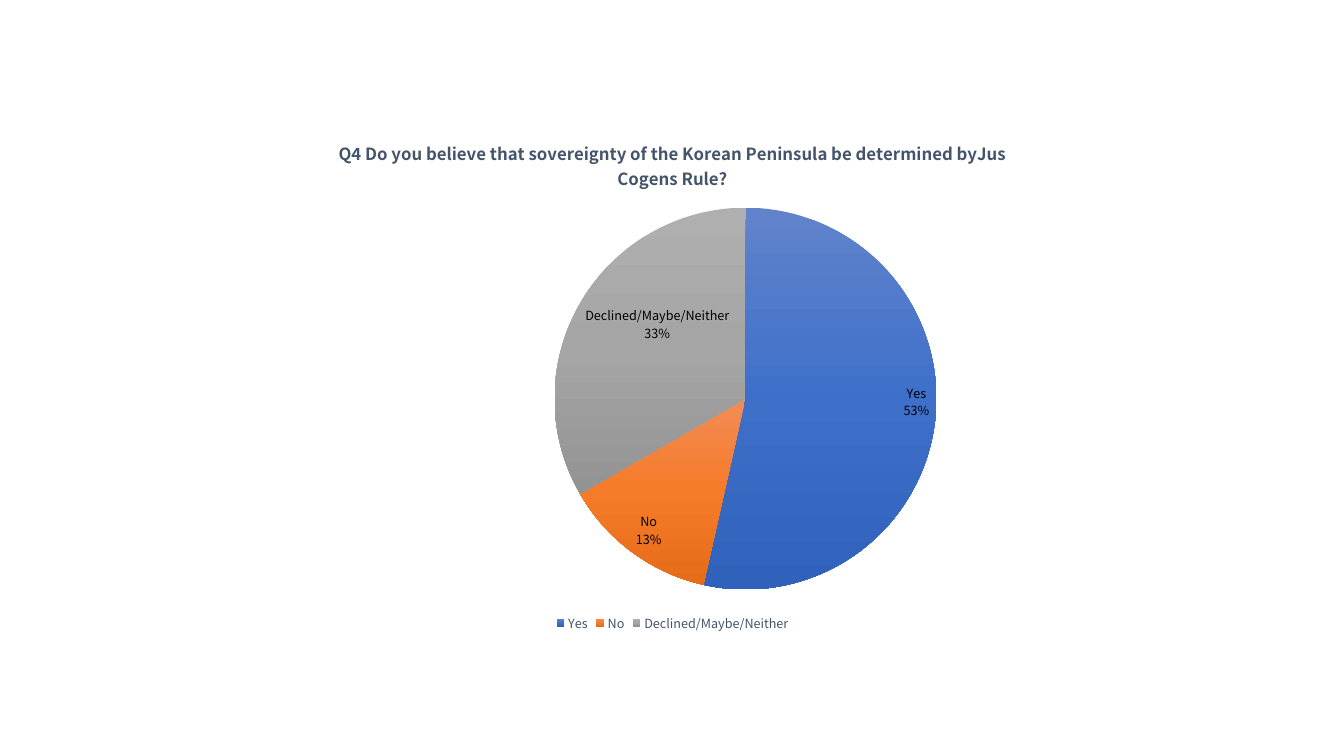
from pptx import Presentation, util as u
from pptx.chart.data import CategoryChartData
from pptx.dml.color import RGBColor
from pptx.enum import chart as ch
from pptx.oxml import parse_xml
from pptx.oxml.ns import nsdecls

TITLE = ("Q4 Do you believe that sovereignty of the Korean Peninsula "
         "be determined byJus Cogens Rule?")
VOTES = {"Yes": 53, "No": 13, "Declined/Maybe/Neither": 33}
COLORS = {
    "Yes": ("6183CB", "3E70CA", "3062BB"),
    "No": ("F18C57", "F67B28", "E56C19"),
    "Declined/Maybe/Neither": ("AFAFAF", "A5A5A5", "939393"),
    "slate": "44546A",
    "black": "000000",
}
FACE = "Noto Sans CJK KR"
SLIDE = (1344, 756)
FRAME = (216, 120, 913, 516)
PIE = (551, 210, 380, 380)
SCALE = 914400 / 100.8


def px(n):
    return u.Emu(round(n * SCALE))


def style(font, size, color, bold=False):
    for key, val in {"name": FACE, "size": u.Pt(size), "bold": bold}.items():
        setattr(font, key, val)
    font.color.rgb = RGBColor.from_string(COLORS[color])


def blend(stops):
    step = 100000 // (len(stops) - 1)
    marks = "".join(f'<a:gs pos="{i * step}"><a:srgbClr val="{hue}"/></a:gs>'
                    for i, hue in enumerate(stops))
    return parse_xml(f'<a:gradFill {nsdecls("a")} rotWithShape="1"><a:gsLst>{marks}'
                     '</a:gsLst><a:lin ang="5400000" scaled="0"/></a:gradFill>')


def place(plot):
    left, top, wide, high = FRAME
    x, y, w, h = PIE
    parts = {"x": (x - left) / wide, "y": (y - top) / high, "w": w / wide, "h": h / high}
    modes = "".join(f'<c:{key}Mode val="edge"/>' for key in "xy")
    sizes = "".join(f'<c:{key} val="{val:.2f}"/>' for key, val in parts.items())
    for old in plot.findall("{*}layout"):
        plot.remove(old)
    plot.insert(0, parse_xml(
        f'<c:layout {nsdecls("c")}><c:manualLayout><c:layoutTarget val="inner"/>'
        f'{modes}{sizes}</c:manualLayout></c:layout>'))


def main():
    deck = Presentation()
    deck.slide_width, deck.slide_height = map(px, SLIDE)
    slide = deck.slides.add_slide(deck.slide_layouts[6])

    data = CategoryChartData()
    data.categories = list(VOTES)
    data.add_series(TITLE, list(VOTES.values()))
    chart = slide.shapes.add_chart(ch.XL_CHART_TYPE.PIE, *map(px, FRAME), data).chart
    style(chart.font, 10, "black")

    chart.has_title = True
    frame = chart.chart_title.text_frame
    frame.text = TITLE
    style(frame.paragraphs[0].runs[0].font, 12, "slate", True)
    chart.chart_title.include_in_layout = False

    chart.has_legend = True
    legend = chart.legend
    legend.position = ch.XL_LEGEND_POSITION.BOTTOM
    legend.include_in_layout = False
    style(legend.font, 9, "slate")

    pie = chart.plots[0]
    pie.vary_by_categories = True
    series = pie.series[0]
    for i, name in enumerate(VOTES):
        point = series.points[i]
        point.format.line.fill.background()
        shape = series._element.get_or_add_dPt_for_point(i).get_or_add_spPr()
        shape.insert(0, blend(COLORS[name]))

    pie.has_data_labels = True
    labels = pie.data_labels
    for key, val in {
        "show_category_name": True, "show_value": True, "show_percentage": False,
        "number_format": '0"%"', "number_format_is_linked": False,
        "position": ch.XL_LABEL_POSITION.INSIDE_END,
    }.items():
        setattr(labels, key, val)
    style(labels.font, 9, "black")
    mark = parse_xml(f'<c:separator {nsdecls("c")}>\n</c:separator>')
    labels._element.find("{*}showBubbleSize").addnext(mark)

    place(chart._chartSpace.chart.plotArea)
    deck.save("out.pptx")


if __name__ == "__main__":
    main()
